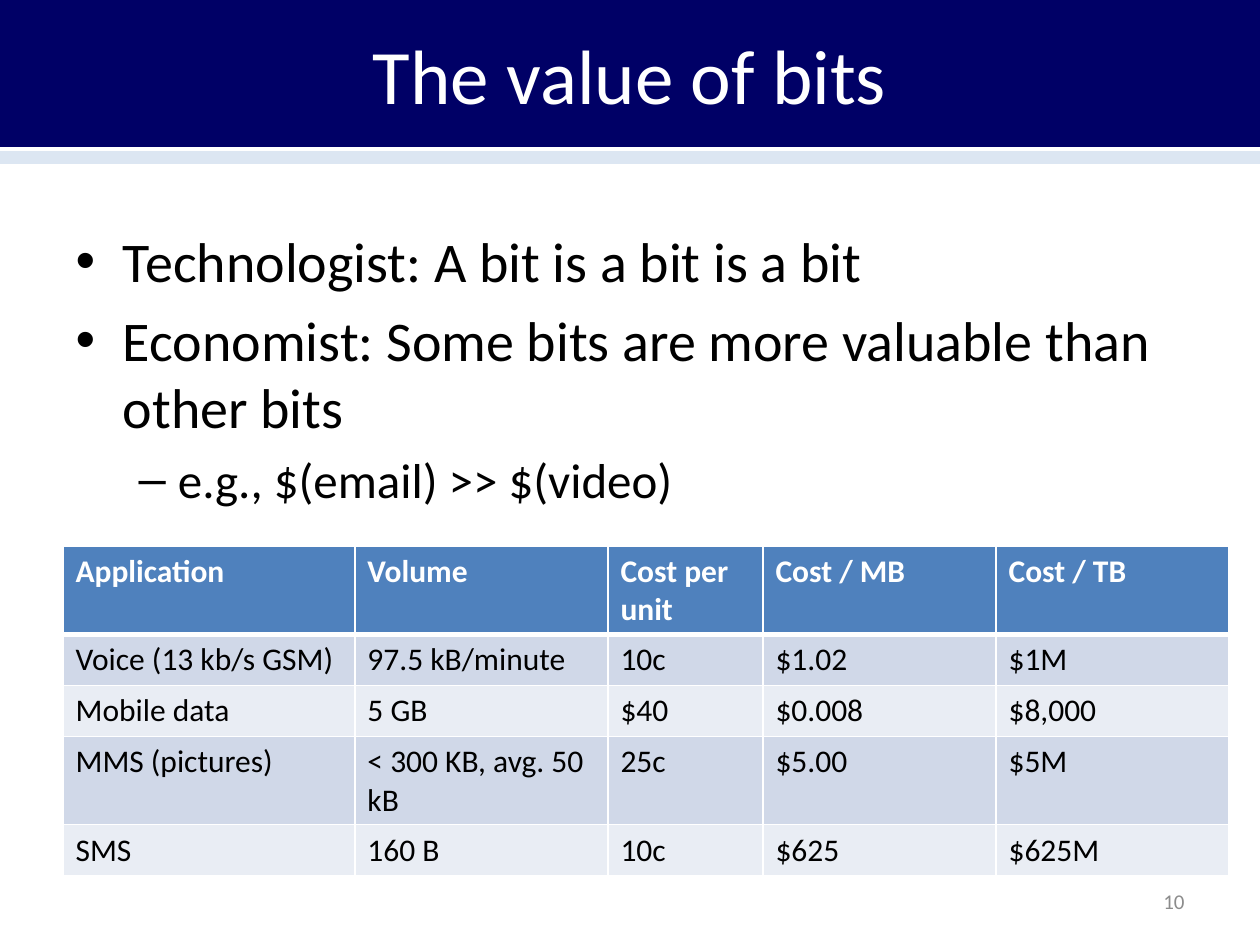
"""Build the slide on the value of bits, with a bullet list and a cost table."""
from dataclasses import dataclass

import lxml.etree
import pptx
import pptx.dml.color
import pptx.enum.shapes
import pptx.enum.text
import pptx.oxml.ns
import pptx.util

Pt = pptx.util.Pt
RGBColor = pptx.dml.color.RGBColor
Align = pptx.enum.text.PP_ALIGN
Anchor = pptx.enum.text.MSO_ANCHOR
qn = pptx.oxml.ns.qn

NAVY = RGBColor(0x00, 0x00, 0x66)
PALE_BLUE = RGBColor(0xDC, 0xE6, 0xF2)
HEADER_BLUE = RGBColor(0x4F, 0x81, 0xBD)
BANDS = (RGBColor(0xD0, 0xD8, 0xE8), RGBColor(0xE9, 0xED, 0xF4))
WHITE = RGBColor(0xFF, 0xFF, 0xFF)
BLACK = RGBColor(0x00, 0x00, 0x00)
GRAY = RGBColor(0x8C, 0x8C, 0x8C)
FONT = "Calibri"
SLIDE_WIDTH, SLIDE_HEIGHT = 720, 540
ROW_HEIGHT = 29.2


@dataclass
class Box:
    left: float
    top: float
    width: float
    height: float

    def lengths(self) -> tuple:
        return Pt(self.left), Pt(self.top), Pt(self.width), Pt(self.height)


@dataclass
class Bullet:
    text: str
    level: int
    size: float
    symbol: str
    margin: float
    indent: float


@dataclass
class Column:
    width: float
    entries: tuple


BULLETS = (
    Bullet("Technologist: A bit is a bit is a bit", 0, 32, "•", 27, -27),
    Bullet("Economist: Some bits are more valuable than other bits", 0, 32, "•", 27, -27),
    Bullet("e.g., $(email) >> $(video)", 1, 28, "–", 58.5, -22.5),
)

COLUMNS = (
    Column(166.8, ("Application", "Voice (13 kb/s GSM)", "Mobile data", "MMS (pictures)", "SMS")),
    Column(144.6, ("Volume", "97.5 kB/minute", "5 GB", "< 300 KB, avg. 50 kB", "160 B")),
    Column(88.6, ("Cost per unit", "10c", "$40", "25c", "10c")),
    Column(133.2, ("Cost / MB", "$1.02", "$0.008", "$5.00", "$625")),
    Column(133.2, ("Cost / TB", "$1M", "$8,000", "$5M", "$625M")),
)


def format_runs(para, size: float, color: RGBColor, bold: bool = False) -> None:
    for span in para.runs:
        span.font.name = FONT
        span.font.size = Pt(size)
        span.font.bold = bold
        span.font.color.rgb = color


def place(shape, box: Box) -> None:
    shape.left, shape.top, shape.width, shape.height = box.lengths()


def draw_banner(slide) -> None:
    banner = slide.shapes.add_shape(
        pptx.enum.shapes.MSO_SHAPE.RECTANGLE, *Box(0, -6, SLIDE_WIDTH, 90).lengths())
    banner.shadow.inherit = False
    banner.fill.solid()
    banner.fill.fore_color.rgb = NAVY
    banner.line.fill.background()
    rule = slide.shapes.add_connector(
        pptx.enum.shapes.MSO_CONNECTOR.STRAIGHT, 0, Pt(90), Pt(SLIDE_WIDTH), Pt(90))
    rule.line.color.rgb = PALE_BLUE
    rule.line.width = Pt(8)
    lxml.etree.SubElement(rule.element.spPr, qn("a:effectLst"))
    for position, shape in enumerate((banner, rule), start=2):
        slide.shapes.element.insert(position, shape.element)


def write_title(title) -> None:
    place(title, Box(36, -3, 648, 90))
    title.text_frame.text = "The value of bits"
    title.text_frame.vertical_anchor = Anchor.MIDDLE
    para = title.text_frame.paragraphs[0]
    para.alignment = Align.CENTER
    format_runs(para, 44, WHITE)


def write_bullets(body, bullets: tuple) -> None:
    place(body, Box(36, 126, 648, 176.4))
    frame = body.text_frame
    frame.text = "\n".join(bullet.text for bullet in bullets)
    for para, bullet in zip(frame.paragraphs, bullets):
        para.level = bullet.level
        format_runs(para, bullet.size, BLACK)
        properties = para._p.get_or_add_pPr()
        properties.set("marL", str(Pt(bullet.margin)))
        properties.set("indent", str(Pt(bullet.indent)))
        spacing = lxml.etree.SubElement(properties, qn("a:spcBef"))
        lxml.etree.SubElement(spacing, qn("a:spcPct"), val="20000")
        lxml.etree.SubElement(properties, qn("a:buChar"), char=bullet.symbol)


def add_borders(cell, top: float, bottom: float) -> None:
    properties = cell._tc.get_or_add_tcPr()
    for side, width in (("L", 1), ("R", 1), ("T", top), ("B", bottom)):
        line = lxml.etree.SubElement(properties, qn(f"a:ln{side}"), w=str(Pt(width)))
        fill = lxml.etree.SubElement(line, qn("a:solidFill"))
        lxml.etree.SubElement(fill, qn("a:srgbClr"), val=str(WHITE))


def draw_table(slide, columns: tuple) -> None:
    row_count = len(columns[0].entries)
    width = sum(column.width for column in columns)
    box = Box(36, 312, width, row_count * ROW_HEIGHT)
    table = slide.shapes.add_table(row_count, len(columns), *box.lengths()).table
    for row in table.rows:
        row.height = Pt(ROW_HEIGHT)
    for column_index, column in enumerate(columns):
        table.columns[column_index].width = Pt(column.width)
        for row_index, entry in enumerate(column.entries):
            header = row_index == 0
            cell = table.cell(row_index, column_index)
            add_borders(cell, 3 if row_index == 1 else 1, 3 if header else 1)
            cell.fill.solid()
            cell.fill.fore_color.rgb = HEADER_BLUE if header else BANDS[(row_index - 1) % 2]
            cell.text_frame.text = entry
            format_runs(cell.text_frame.paragraphs[0], 18, WHITE if header else BLACK, header)


def write_page_number(slide) -> None:
    frame = slide.shapes.add_textbox(*Box(516, 500.5, 168, 28.75).lengths()).text_frame
    frame.word_wrap = True
    frame.vertical_anchor = Anchor.MIDDLE
    frame.text = "10"
    frame.paragraphs[0].alignment = Align.RIGHT
    format_runs(frame.paragraphs[0], 12, GRAY)


def main() -> None:
    deck = pptx.Presentation()
    deck.slide_width, deck.slide_height = Pt(SLIDE_WIDTH), Pt(SLIDE_HEIGHT)
    page = deck.slides.add_slide(deck.slide_layouts[1])
    draw_banner(page)
    write_title(page.shapes.title)
    write_bullets(page.placeholders[1], BULLETS)
    write_page_number(page)
    draw_table(page, COLUMNS)
    deck.save("out.pptx")


if __name__ == "__main__":
    main()
